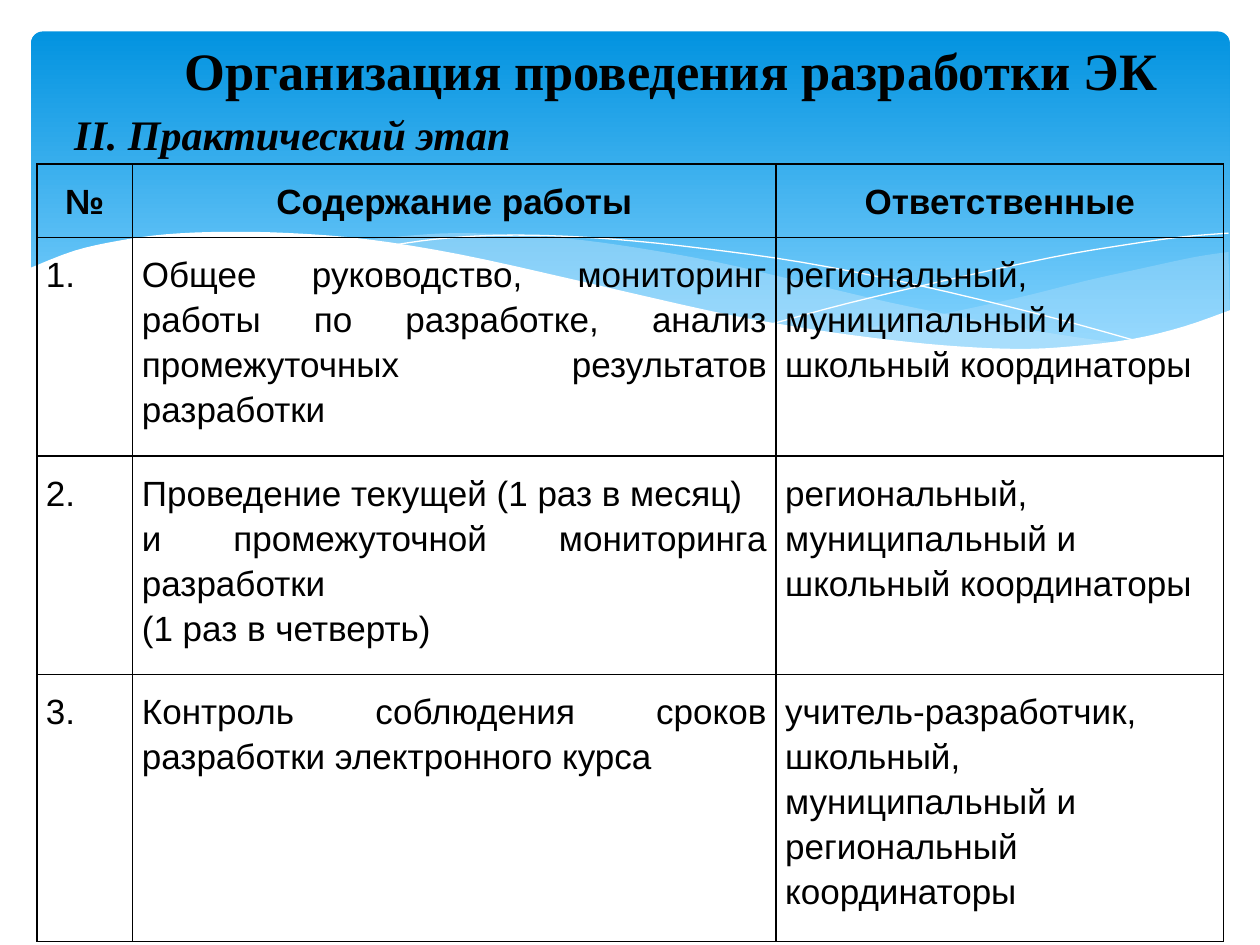
"""Build the slide about organising the development of an electronic course."""
from dataclasses import dataclass
from typing import Optional

from lxml import etree
from pptx import Presentation
from pptx import util as u
from pptx.dml import color
from pptx.enum import shapes, text
from pptx.oxml import ns

Point = tuple[float, float]
ALIGN = text.PP_ALIGN
BLACK, WHITE, MIST = "000000", "FFFFFF", "C6E7FC"
TITLE_FONT = {"name": "Times New Roman", "bold": True}
TABLE_FONT = {"name": "Arial", "size": u.Pt(20)}


@dataclass
class Wave:
    edges: list[list[Point]]
    fill: Optional[str] = None
    opacity: int = 100


@dataclass
class Line:
    content: str
    align: ALIGN
    font: dict
    indent: float = 0


@dataclass
class Column:
    heading: str
    width: float
    align: ALIGN
    entries: list[list[str]]


WAVES = [
    Wave([[(702, 144), (682.6, 146.9), (652.3, 153.4), (619.9, 160.6), (579.6, 170.6),
           (524.9, 182.2), (475.9, 190.8)],
          [(475.9, 190.8), (507.6, 195.1), (545, 198.7), (586.1, 200.2), (627.8, 197.3),
           (663.1, 190.8), (683.3, 185), (702.7, 177.8)]], MIST, 29),
    Wave([[(643, 196.6), (602.6, 190.8), (558, 182.9), (508.3, 172.8), (452.9, 159.8),
           (409.7, 149.8), (370.1, 142.6), (334.8, 137.5), (302.4, 134.6), (259.9, 133.2),
           (225.4, 135.4), (205.9, 137.5)],
          [(205.9, 137.5), (246.2, 143.3), (290.9, 151.9), (323.3, 159.8), (381.6, 172.8),
           (432.7, 183.6), (478.8, 191.5), (519.8, 197.3), (556.6, 199.4), (589, 200.2),
           (617, 199.4), (643, 196.6)]], MIST, 40),
    Wave([[(222.5, 140.4), (247.7, 136.8), (278.6, 134.6), (311.8, 134.6), (352.1, 136.8),
           (400.3, 141.8), (457.9, 149.8), (523.4, 162.7), (598.3, 180.7), (653, 195.8)]]),
    Wave([[(441.4, 185), (483.8, 173.5), (538.6, 160.6), (601.9, 146.9), (644.4, 139.7),
           (675.4, 135.4), (702, 133.2)]]),
    Wave([[(703.4, 177.1), (676.8, 186.5), (647.3, 193.7), (612, 198), (582.5, 199.4),
           (547.9, 198), (509.8, 194.4), (466.6, 188.6), (416.9, 180), (362.2, 167.8),
           (321.8, 158.4), (262.8, 145.4), (210.2, 136.8), (165.6, 133.2), (127.4, 132.5),
           (95, 133.9), (68.4, 137.5), (42.5, 143.3), (16.6, 153.4)],
          [(16.6, 236.9), (703.4, 236.9)]], WHITE),
]

TITLE_LINES = [
    Line("Организация проведения разработки ЭК", ALIGN.CENTER,
         TITLE_FONT | {"size": u.Pt(30)}, 28),
    Line("II. Практический этап", ALIGN.JUSTIFY,
         TITLE_FONT | {"size": u.Pt(24), "italic": True}),
]

COORDINATORS = ["региональный, муниципальный и школьный координаторы"]
ROW_HEIGHTS = [39, 83, 118, 83]
COLUMNS = [
    Column("№", 54.8, ALIGN.JUSTIFY, [["1."], ["2."], ["3."]]),
    Column("Содержание работы", 367.6, ALIGN.JUSTIFY, [
        ["Общее руководство, мониторинг работы по разработке, анализ промежуточных "
         "результатов разработки"],
        ["Проведение текущей (1 раз в месяц)", "и промежуточной мониторинга разработки",
         "(1 раз в четверть)"],
        ["Контроль соблюдения сроков разработки электронного курса"]]),
    Column("Ответственные", 255.8, ALIGN.LEFT, [
        COORDINATORS, COORDINATORS,
        ["учитель-разработчик, школьный, муниципальный и региональный координаторы"]]),
]


def rgb(value: str) -> color.RGBColor:
    return color.RGBColor.from_string(value)


def assign(target, values: dict) -> None:
    for name, value in values.items():
        setattr(target, name, value)


def smooth_curve(knots: list[Point], steps: int = 4) -> list[Point]:
    padded = [knots[0], *knots, knots[-1]]
    curve = [knots[0]]
    for a, b, c, d in zip(padded, padded[1:], padded[2:], padded[3:]):
        for step in range(1, steps + 1):
            t = step / steps
            curve.append(tuple(
                (2 * q + (r - p) * t + (2 * p - 5 * q + 4 * r - s) * t ** 2
                 + (3 * q - p - 3 * r + s) * t ** 3) / 2
                for p, q, r, s in zip(a, b, c, d)))
    return curve


def draw_sky(slide) -> None:
    shape = slide.shapes.add_shape(shapes.MSO_SHAPE.ROUNDED_RECTANGLE,
                                   u.Pt(17.8), u.Pt(18), u.Pt(684.9), u.Pt(194.4))
    shape.adjustments[0] = 0.034
    shape.shadow.inherit = False
    shape.line.fill.background()
    shape.fill.gradient()
    shape.fill.gradient_angle = 270
    for stop, (position, value) in zip(shape.fill.gradient_stops,
                                       [(0, "0293E0"), (0.9, "81D2FE")]):
        stop.position = position
        stop.color.rgb = rgb(value)


def draw_wave(slide, wave: Wave) -> None:
    points = [(u.Pt(x), u.Pt(y)) for edge in wave.edges for x, y in smooth_curve(edge)]
    builder = slide.shapes.build_freeform(*points[0])
    builder.add_line_segments(points[1:], close=wave.fill is not None)
    shape = builder.convert_to_shape()
    shape.shadow.inherit = False
    if wave.fill is None:
        shape.fill.background()
        shape.line.color.rgb = rgb(WHITE)
        shape.line.width = u.Pt(0.75)
        return
    shape.line.fill.background()
    shape.fill.solid()
    shape.fill.fore_color.rgb = rgb(wave.fill)
    if wave.opacity < 100:
        tone = shape.fill._xPr.find(".//" + ns.qn("a:srgbClr"))
        etree.SubElement(tone, ns.qn("a:alpha"), val=str(wave.opacity * 1000))


def write_lines(frame, lines: list[Line]) -> None:
    for index, line in enumerate(lines):
        paragraph = frame.add_paragraph() if index else frame.paragraphs[0]
        assign(paragraph, {"alignment": line.align, "line_spacing": 1.15})
        if line.indent:
            paragraph._p.get_or_add_pPr().set("indent", str(u.Pt(line.indent)))
        run = paragraph.add_run()
        run.text = line.content
        assign(run.font, line.font)
        run.font.color.rgb = rgb(BLACK)


def draw_title(slide) -> None:
    shape = slide.shapes.add_textbox(u.Pt(35.3), u.Pt(12.6), u.Pt(668.9), u.Pt(79))
    shape.text_frame.word_wrap = True
    write_lines(shape.text_frame, TITLE_LINES)


def add_borders(cell) -> None:
    properties = cell._tc.get_or_add_tcPr()
    for index, side in enumerate(("lnL", "lnR", "lnT", "lnB")):
        border = etree.Element(ns.qn(f"a:{side}"), w=str(u.Pt(1)))
        fill = etree.SubElement(border, ns.qn("a:solidFill"))
        etree.SubElement(fill, ns.qn("a:srgbClr"), val=BLACK)
        properties.insert(index, border)


def draw_table(slide) -> None:
    table = slide.shapes.add_table(
        len(ROW_HEIGHTS), len(COLUMNS), u.Pt(21), u.Pt(93.8),
        u.Pt(sum(column.width for column in COLUMNS)), u.Pt(236)).table
    assign(table, {"first_row": False, "horz_banding": False})
    for row, height in zip(table.rows, ROW_HEIGHTS):
        row.height = u.Pt(height)
    margins = {"margin_left": u.Pt(5.3), "margin_right": u.Pt(5.3),
               "margin_top": u.Pt(7.2), "margin_bottom": u.Pt(7.2)}
    for across, column in enumerate(COLUMNS):
        table.columns[across].width = u.Pt(column.width)
        for down, entry in enumerate([[column.heading], *column.entries]):
            cell = table.cell(down, across)
            assign(cell, margins)
            cell.fill.background()
            add_borders(cell)
            align = column.align if down else ALIGN.CENTER
            font = TABLE_FONT | {"bold": down == 0}
            write_lines(cell.text_frame, [Line(item, align, font) for item in entry])


def main() -> None:
    presentation = Presentation()
    assign(presentation, {"slide_width": u.Pt(720), "slide_height": u.Pt(540)})
    slide = presentation.slides.add_slide(presentation.slide_layouts[6])
    draw_sky(slide)
    for wave in WAVES:
        draw_wave(slide, wave)
    draw_title(slide)
    draw_table(slide)
    presentation.save("out.pptx")


if __name__ == "__main__":
    main()
